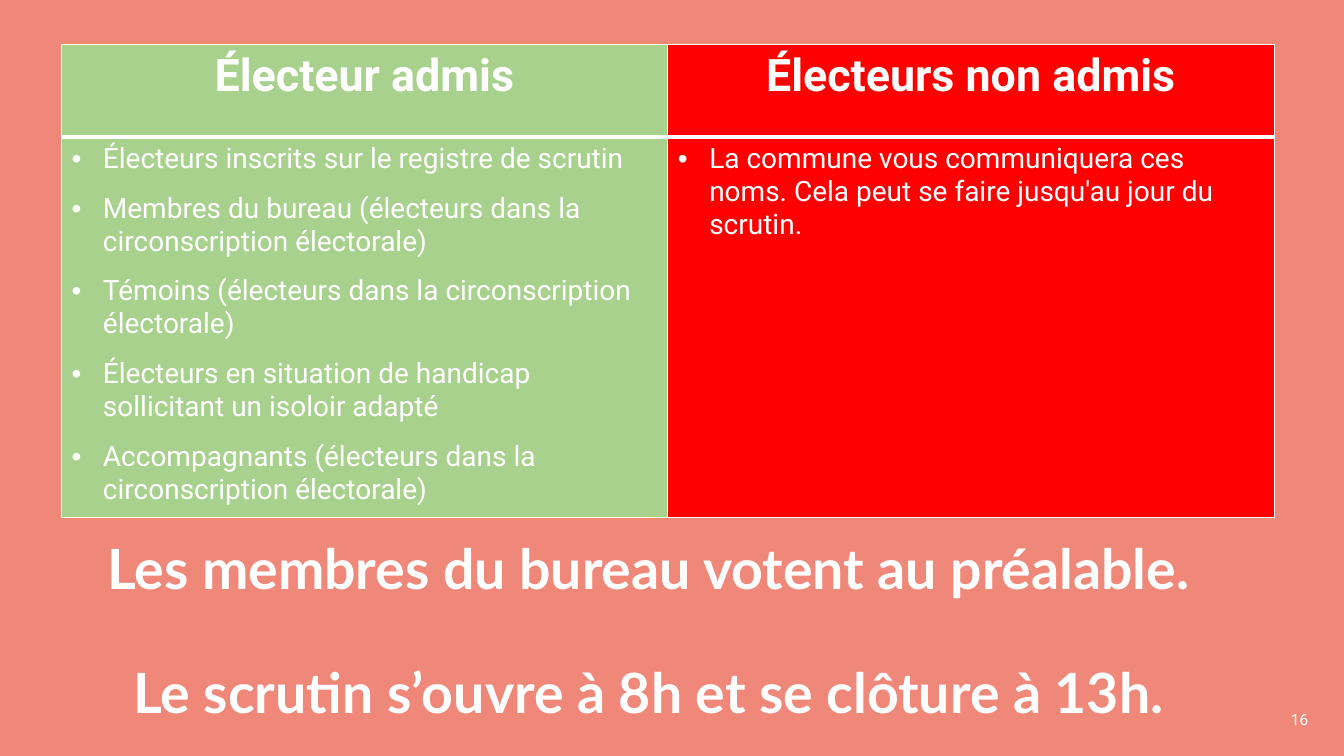
from pptx import Presentation
from pptx.dml.color import RGBColor as RGB
from pptx.enum.text import MSO_ANCHOR as Anchor, PP_ALIGN as Align
from pptx.oxml import parse_xml
from pptx.oxml.ns import nsdecls
from pptx.util import Cm, Pt

HUES = {"back": "EF8879", "text": "FFFFFF", "yes": "A9D18E", "no": "FF0000"}

HEAD = {"name": "Roboto", "size": Pt(32), "bold": True}
BODY = {"name": "Roboto", "size": Pt(20), "bold": False}
TITLE = {"name": "Lato", "size": Pt(39.6), "bold": True}
NUMBER = {"name": "Roboto", "size": Pt(11)}

GROUPS = [
    ("Électeur admis", "yes", {"space_after": Pt(12)}, [
        "Électeurs inscrits sur le registre de scrutin",
        "Membres du bureau (électeurs dans la circonscription électorale)",
        "Témoins (électeurs dans la circonscription électorale)",
        "Électeurs en situation de handicap sollicitant un isoloir adapté",
        "Accompagnants (électeurs dans la circonscription électorale)",
    ]),
    ("Électeurs non admis", "no", {}, [
        "La commune vous communiquera ces noms. "
        "Cela peut se faire jusqu'au jour du scrutin.",
    ]),
]
NOTICE = ["Les membres du bureau votent au préalable.",
          "Le scrutin s’ouvre à 8h et se clôture à 13h."]


def apply(item, style):
    for key, value in style.items():
        setattr(item, key, value)


def write(frame, lines, font, layout):
    """Fill a text frame with one paragraph per line."""
    for i, line in enumerate(lines):
        para = frame.paragraphs[0] if i == 0 else frame.add_paragraph()
        apply(para, layout)
        run = para.add_run()
        run.text = line
        apply(run.font, font)
        run.font.color.rgb = RGB.from_string(HUES["text"])


def add_bullet(para):
    props = para._p.get_or_add_pPr()
    props.set("marL", str(Cm(0.79)))
    props.set("indent", str(-Cm(0.79)))
    props.append(parse_xml(f'<a:buFont {nsdecls("a")} typeface="Arial"/>'))
    props.append(parse_xml(f'<a:buChar {nsdecls("a")} char="•"/>'))


def paint(cell, hue, top, bottom):
    """Fill a cell and rule its four sides, with widths in points."""
    cell.fill.solid()
    cell.fill.fore_color.rgb = RGB.from_string(HUES[hue])
    props = cell._tc.get_or_add_tcPr()
    sides = {"lnL": 1, "lnR": 1, "lnT": top, "lnB": bottom}
    for i, (side, width) in enumerate(sides.items()):
        props.insert(i, parse_xml(
            f'<a:{side} {nsdecls("a")} w="{Pt(width)}"><a:solidFill>'
            f'<a:srgbClr val="{HUES["text"]}"/></a:solidFill></a:{side}>'))


def add_text(slide, box, lines, font, layout):
    frame = slide.shapes.add_textbox(*map(Cm, box)).text_frame
    frame.word_wrap = True
    frame.vertical_anchor = Anchor.MIDDLE
    write(frame, lines, font, layout)
    return frame


def add_groups(slide):
    box = map(Cm, (1.55, 1.12, 30.56, 11.76))
    table = slide.shapes.add_table(2, len(GROUPS), *box).table
    for row, height in zip(table.rows, (2.34, 9.42)):
        row.height = Cm(height)
    for col, (name, hue, gap, items) in enumerate(GROUPS):
        table.columns[col].width = Cm(15.28)
        head, body = table.cell(0, col), table.cell(1, col)
        write(head.text_frame, [name], HEAD, {"alignment": Align.CENTER})
        write(body.text_frame, items, BODY, gap)
        for para in body.text_frame.paragraphs:
            add_bullet(para)
        paint(head, hue, 1, 3)
        paint(body, hue, 3, 1)


def main():
    deck = Presentation()
    deck.slide_width, deck.slide_height = Cm(33.87), Cm(19.05)
    slide = deck.slides.add_slide(deck.slide_layouts[6])
    slide.background.fill.solid()
    slide.background.fill.fore_color.rgb = RGB.from_string(HUES["back"])

    notice = add_text(slide, (1.55, 14.22, 29.59, 3.4), NOTICE, TITLE,
                      {"alignment": Align.CENTER, "line_spacing": Pt(44)})
    notice.paragraphs[1].space_before = Pt(44)
    add_text(slide, (25.6, 17.63, 7.62, 1.02), ["16"], NUMBER,
             {"alignment": Align.RIGHT})
    add_groups(slide)
    deck.save("out.pptx")


if __name__ == "__main__":
    main()
